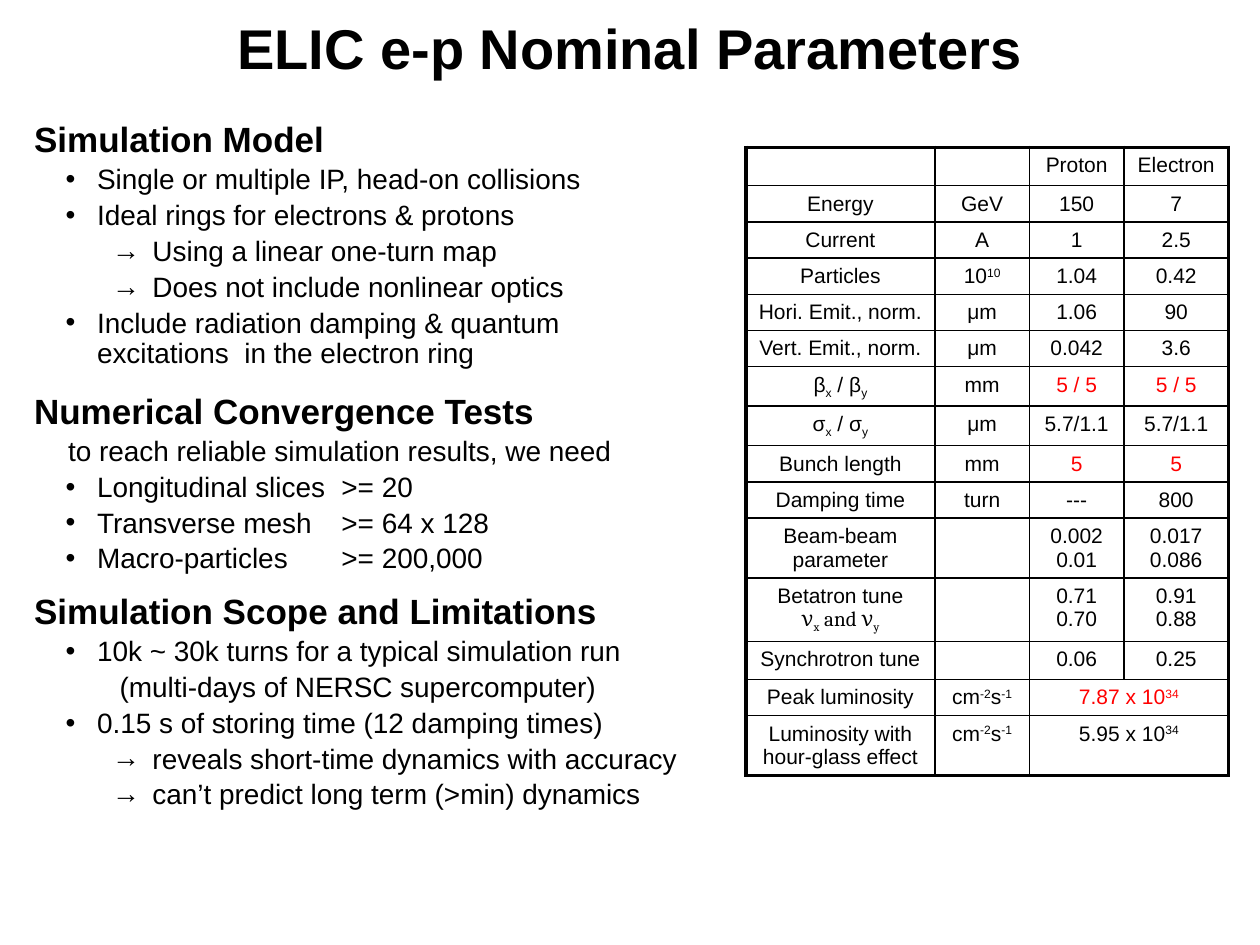
from dataclasses import dataclass

from lxml.etree import SubElement
from pptx import Presentation
from pptx.dml.color import RGBColor
from pptx.enum.text import MSO_ANCHOR, MSO_AUTO_SIZE, PP_ALIGN
from pptx.oxml.ns import qn
from pptx.util import Inches, Pt


@dataclass(frozen=True)
class Theme:
    font: str = "Arial"
    math_font: str = "Cambria"
    ink: str = "000000"
    accent: str = "FF0000"
    title_size: int = 32
    heading_size: int = 20
    list_size: int = 16
    table_size: int = 12
    outer_line: float = 2.25
    inner_line: float = 1


@dataclass(frozen=True)
class ListStyle:
    level: int
    margin: float
    indent: float
    bullet: str = ""


STYLES = {
    "heading": ListStyle(0, 0.12, -0.12),
    "lead": ListStyle(0, 0.27, 0),
    "item": ListStyle(1, 0.5, -0.25, "•"),
    "aside": ListStyle(1, 0.68, 0),
    "arrow": ListStyle(2, 0.94, -0.32, "→"),
}
# Both stops lead to one column, whether measured from the margin or the box.
TAB_STOPS = (1.94, 2.44)

SECTIONS = [
    (0, "Simulation Model", [
        ("item", "Single or multiple IP, head-on collisions"),
        ("item", "Ideal rings for electrons & protons"),
        ("arrow", "Using a linear one-turn map"),
        ("arrow", "Does not include nonlinear optics"),
        ("item", "Include radiation damping & quantum excitations  in the electron ring"),
    ]),
    (14, "Numerical Convergence Tests", [
        ("lead", "to reach reliable simulation results, we need"),
        ("item", "Longitudinal slices\t>= 20"),
        ("item", "Transverse mesh\t>= 64 x 128"),
        ("item", "Macro-particles\t>= 200,000"),
    ]),
    (11, "Simulation Scope and Limitations", [
        ("item", "10k ~ 30k turns for a typical simulation run"),
        ("aside", "(multi-days of NERSC supercomputer)"),
        ("item", "0.15 s of storing time (12 damping times)"),
        ("arrow", "reveals short-time dynamics with accuracy"),
        ("arrow", "can’t predict long term (>min) dynamics"),
    ]),
]

# In a cell, ^ starts a superscript, _ a subscript and | returns to the baseline;
# ~ breaks the line and goes on in the math font; a leading ! marks accent colour.
PARAMETERS = [
    ("", "", "Proton", "Electron"),
    ("Energy", "GeV", "150", "7"),
    ("Current", "A", "1", "2.5"),
    ("Particles", "10^10", "1.04", "0.42"),
    ("Hori. Emit., norm.", "μm", "1.06", "90"),
    ("Vert. Emit., norm.", "μm", "0.042", "3.6"),
    ("β_x| / β_y", "mm", "!5 / 5", "!5 / 5"),
    ("σ_x| / σ_y", "μm", "5.7/1.1", "5.7/1.1"),
    ("Bunch length", "mm", "!5", "!5"),
    ("Damping time", "turn", "---", "800"),
    ("Beam-beam parameter", "", "0.002 0.01", "0.017 0.086"),
    ("Betatron tune~ν_x| and ν_y", "", "0.71 0.70", "0.91 0.88"),
    ("Synchrotron tune", "", "0.06", "0.25"),
    ("Peak luminosity", "cm^-2|s^-1", "!7.87 x 10^34", None),
    ("Luminosity with hour-glass effect", "cm^-2|s^-1", "5.95 x 10^34", None),
]
COLUMN_WIDTHS = (6, 3, 3, 3.32)
SINGLE_ROW = 1.15
TALL_ROWS = {10: 1.9, 11: 2, 14: 1.9}
BASELINES = {"^": 30000, "_": -25000, "|": 0}


def split_baselines(text):
    """Return (baseline, words) pairs for marked-up cell text."""
    spans = [[0, ""]]
    for letter in text:
        if letter in BASELINES:
            spans.append([BASELINES[letter], ""])
        else:
            spans[-1][1] += letter
    return spans


class PageBuilder:
    def __init__(self, page, theme):
        self.page = page
        self.theme = theme

    def grid(self, count):
        """Convert grid units to a length: 40 columns by 30 rows fill the slide."""
        return Inches(count * 0.25)

    def place(self, shape, column, row, columns, rows):
        shape.left, shape.top = self.grid(column), self.grid(row)
        shape.width, shape.height = self.grid(columns), self.grid(rows)

    def format_span(self, span, size, bold=False, color=None, font=None):
        span.font.name = font or self.theme.font
        span.font.size = Pt(size)
        span.font.bold = bold
        span.font.color.rgb = RGBColor.from_string(color or self.theme.ink)

    def title(self, text):
        box = self.page.shapes.title
        self.place(box, 3, 0.32, 34, 2.32)
        frame = box.text_frame
        frame.text = text
        frame.auto_size = MSO_AUTO_SIZE.NONE
        frame.vertical_anchor = MSO_ANCHOR.MIDDLE
        frame.paragraphs[0].alignment = PP_ALIGN.CENTER
        self.format_span(frame.paragraphs[0].runs[0], self.theme.title_size, True)

    def list_line(self, para, text, kind, space):
        style = STYLES[kind]
        is_heading = kind == "heading"
        para.text = text
        para.level = style.level
        para.line_spacing = 0.9
        para.space_before = Pt(space)
        props = para._p.get_or_add_pPr()
        props.set("marL", str(Inches(style.margin)))
        props.set("indent", str(Inches(style.indent)))
        if style.bullet:
            SubElement(props, qn("a:buFont"), typeface=self.theme.font)
            SubElement(props, qn("a:buChar"), char=style.bullet)
        else:
            SubElement(props, qn("a:buNone"))
        if "\t" in text:
            stops = SubElement(props, qn("a:tabLst"))
            for stop in TAB_STOPS:
                SubElement(stops, qn("a:tab"), pos=str(Inches(stop)), algn="l")
        size = self.theme.heading_size if is_heading else self.theme.list_size
        for span in para.runs:
            self.format_span(span, size, is_heading)

    def body(self, sections):
        box = self.page.placeholders[1]
        self.place(box, 0.68, 3.68, 21.68, 24.32)
        frame = box.text_frame
        frame.auto_size = MSO_AUTO_SIZE.NONE
        lines = []
        for gap, heading, items in sections:
            lines.append((heading, "heading", gap))
            lines += [(text, kind, 3.2) for kind, text in items]
        for index, line in enumerate(lines):
            para = frame.add_paragraph() if index else frame.paragraphs[0]
            self.list_line(para, *line)

    def cell_border(self, cell, side, width):
        line = SubElement(cell._tc.get_or_add_tcPr(), qn(f"a:ln{side}"), w=str(Pt(width)))
        fill = SubElement(line, qn("a:solidFill"))
        SubElement(fill, qn("a:srgbClr"), val=self.theme.ink)

    def cell_text(self, cell, text):
        para = cell.text_frame.paragraphs[0]
        para.alignment = PP_ALIGN.CENTER
        size = self.theme.table_size
        if not text:
            SubElement(para._p, qn("a:endParaRPr"), sz=str(size * 100))
            return
        color = self.theme.accent if text.startswith("!") else self.theme.ink
        fonts = (self.theme.font, self.theme.math_font)
        for index, line in enumerate(text.lstrip("!").split("~")):
            if index:
                para.add_line_break()
            for baseline, words in split_baselines(line):
                span = para.add_run()
                span.text = words
                self.format_span(span, size, color=color, font=fonts[index])
                if baseline:
                    span.font._element.set("baseline", str(baseline))

    def table(self, rows, column, row):
        heights = [TALL_ROWS.get(index, SINGLE_ROW) for index in range(len(rows))]
        frame = self.page.shapes.add_table(
            len(rows), len(COLUMN_WIDTHS), self.grid(column), self.grid(row),
            self.grid(sum(COLUMN_WIDTHS)), self.grid(sum(heights)))
        table = frame.table
        table.first_row = table.horz_banding = False
        for table_column, width in zip(table.columns, COLUMN_WIDTHS):
            table_column.width = self.grid(width)
        last_row, last_column = len(rows) - 1, len(COLUMN_WIDTHS) - 1
        for y, values in enumerate(rows):
            table.rows[y].height = self.grid(heights[y])
            for x, text in enumerate(values):
                cell = table.cell(y, x)
                merged = values[-1] is None and x == last_column - 1
                edges = {"L": x == 0, "R": x == last_column or merged,
                         "T": y == 0, "B": y == last_row}
                for side, outer in edges.items():
                    width = self.theme.outer_line if outer else self.theme.inner_line
                    self.cell_border(cell, side, width)
                cell.fill.background()
                self.cell_text(cell, text)
            if values[-1] is None:
                table.cell(y, last_column - 1).merge(table.cell(y, last_column))


def main():
    deck = Presentation()
    deck.slide_width, deck.slide_height = Inches(10), Inches(7.5)
    page = deck.slides.add_slide(deck.slide_layouts[1])
    builder = PageBuilder(page, Theme())
    builder.title("ELIC e-p Nominal Parameters")
    builder.body(SECTIONS)
    builder.table(PARAMETERS, 23.68, 4.68)
    deck.save("out.pptx")


if __name__ == "__main__":
    main()
